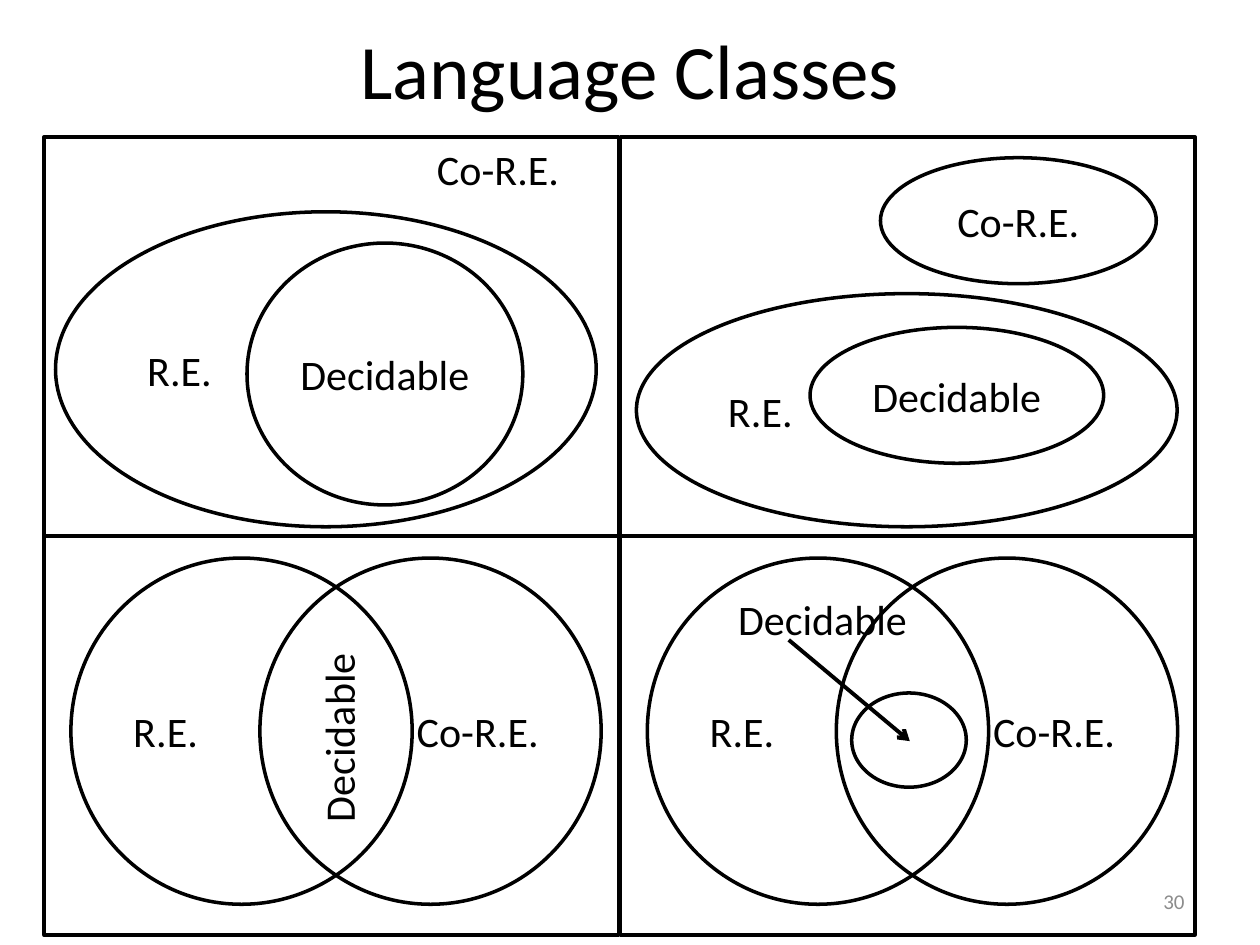
from pptx import Presentation
from pptx.dml.color import RGBColor
from pptx.enum.shapes import MSO_CONNECTOR as Link, MSO_SHAPE as Kind
from pptx.enum.text import MSO_ANCHOR as Anchor, PP_ALIGN as Align
from pptx.oxml.ns import qn
from pptx.util import Cm, Pt
from lxml.etree import SubElement

BLACK = RGBColor(0, 0, 0)
GREY = RGBColor(0x8C, 0x8C, 0x8C)
FONT = "Calibri"
RE, CO, DEC = "R.E.", "Co-R.E.", "Decidable"
LEFT, MID, RIGHT = Align.LEFT, Align.CENTER, Align.RIGHT

COLS = (0.89, 12.51)
ROWS = (2.76, 10.8)
PANEL = (11.58, 8.05)

VENN = [(RE, LEFT), (CO, RIGHT)]
DISC = (6.88, 6.98)
INSET = (0.54, 0.45)
STEP = 3.81

OVALS = [
    (RE, LEFT, (1.12, 4.27, 10.9, 6.35)),
    (DEC, MID, (4.98, 4.9, 5.56, 5.28)),
    (RE, LEFT, (12.83, 5.92, 10.9, 4.7)),
    (DEC, MID, (16.33, 6.6, 5.92, 2.74)),
    (CO, MID, (17.75, 3.18, 5.56, 2.54)),
    ("", MID, (17.17, 13.97, 2.31, 1.9)),
]
LABELS = [
    (CO, (8.56, 2.77), 0),
    (DEC, (4.85, 14.22), 270),
    (DEC, (14.63, 11.84), 0),
]
TAG = (3.94, 1.27)
ARROW = (15.9, 12.9, 18.34, 14.94)


def write(shape, text, align, size=24, color=BLACK, anchor=Anchor.MIDDLE):
    frame = shape.text_frame
    frame.word_wrap = True
    frame.vertical_anchor = anchor
    para = frame.paragraphs[0]
    para.alignment = align
    run = para.add_run()
    run.text = text
    run.font.name = FONT
    run.font.size = Pt(size)
    run.font.color.rgb = color


def draw(slide, kind, box, text="", align=MID):
    shape = slide.shapes.add_shape(kind, *map(Cm, box))
    shape.shadow.inherit = False
    shape.fill.background()
    shape.line.color.rgb = BLACK
    shape.line.width = Pt(2)
    if text:
        write(shape, text, align)


def label(slide, box, text, align, turn=0, **style):
    shape = slide.shapes.add_textbox(*map(Cm, box))
    shape.rotation = turn
    write(shape, text, align, **style)


def point(slide, ends):
    line = slide.shapes.add_connector(Link.STRAIGHT, *map(Cm, ends))
    line.line.color.rgb = BLACK
    line.line.width = Pt(2.25)
    SubElement(line.line._get_or_add_ln(), qn("a:tailEnd"), type="arrow")
    SubElement(line._element.spPr, qn("a:effectLst"))


def main():
    deck = Presentation()
    deck.slide_width, deck.slide_height = Cm(25.4), Cm(19.05)
    slide = deck.slides.add_slide(deck.slide_layouts[6])

    label(slide, (1.27, -0.2, 22.86, 3.18), "Language Classes", MID, size=44)
    label(slide, (18.21, 17.65, 5.92, 1.02), "30", RIGHT, size=12, color=GREY)

    for x in COLS:
        for y in ROWS:
            draw(slide, Kind.RECTANGLE, (x, y, *PANEL))
        for i, (text, align) in enumerate(VENN):
            spot = (x + INSET[0] + i * STEP, ROWS[1] + INSET[1])
            draw(slide, Kind.OVAL, (*spot, *DISC), text, align)

    for text, align, box in OVALS:
        draw(slide, Kind.OVAL, box, text, align)
    for text, spot, turn in LABELS:
        label(slide, (*spot, *TAG), text, LEFT, turn, anchor=Anchor.TOP)
    point(slide, ARROW)

    deck.save("out.pptx")


if __name__ == "__main__":
    main()
